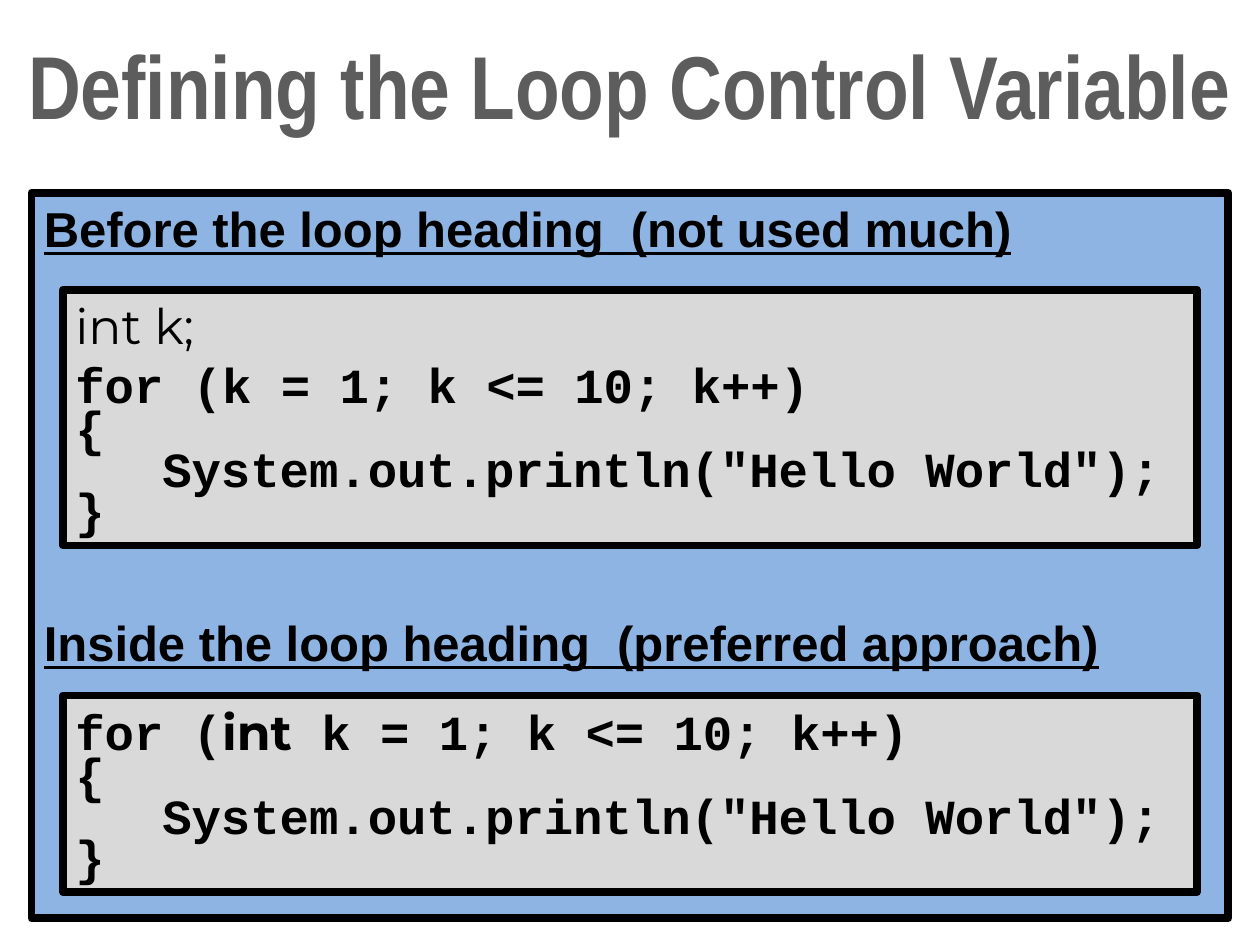
from dataclasses import dataclass

from lxml.etree import SubElement
from pptx import Presentation
from pptx.dml.color import RGBColor as RGB
from pptx.enum.shapes import MSO_SHAPE as SHAPE
from pptx.enum.text import MSO_ANCHOR as ANCHOR, PP_ALIGN as ALIGN
from pptx.oxml.ns import qn
from pptx.util import Inches, Pt

COLORS = {"title": "5D5D5D", "panel": "8EB4E3", "code": "D9D9D9", "ink": "000000"}
HEADING = {"name": "Arial", "size": Pt(28), "bold": True, "underline": True}
CODE = {"name": "Courier New", "size": Pt(28), "bold": True}
KEYWORD = {"name": "Montserrat", "size": Pt(28), "bold": True}
DECLARATION = KEYWORD | {"bold": False}
TITLE = {"name": "Arial Narrow", "size": Pt(51), "bold": True}


@dataclass
class Line:
    runs: list[tuple[str, dict]]
    spacing: float = 1.0
    before: float = 0


@dataclass
class Box:
    left: float
    top: float
    width: float
    height: float
    fill: str
    lines: list[Line]


def add_run(p, text: str, fmt: dict, color: str = "ink") -> None:
    r = p.add_run()
    r.text = text
    for key, value in fmt.items():
        setattr(r.font, key, value)
    r.font.color.rgb = RGB.from_string(COLORS[color])


def add_indent_stop(p, inches: float) -> None:
    tabs = SubElement(p._p.get_or_add_pPr(), qn("a:tabLst"))
    SubElement(tabs, qn("a:tab"), pos=str(Inches(inches)), algn="l")


def add_box(s, box: Box) -> None:
    sp = s.shapes.add_shape(SHAPE.RECTANGLE, Inches(box.left), Inches(box.top),
                            Inches(box.width), Inches(box.height))
    sp.shadow.inherit = False
    sp.fill.solid()
    sp.fill.fore_color.rgb = RGB.from_string(COLORS[box.fill])
    sp.line.color.rgb = RGB.from_string(COLORS["ink"])
    sp.line.width = Pt(4.5)
    tf = sp.text_frame
    tf.word_wrap = True
    tf.vertical_anchor = ANCHOR.TOP
    for i, line in enumerate(box.lines):
        p = tf.paragraphs[0] if i == 0 else tf.add_paragraph()
        p.alignment = ALIGN.LEFT
        p.line_spacing = line.spacing
        if line.before:
            p.space_before = Pt(line.before)
        if line.runs[0][0].startswith("\t"):
            add_indent_stop(p, 0.69)
        for text, fmt in line.runs:
            add_run(p, text, fmt)


def add_title(s, text: str) -> None:
    sp = s.shapes.add_textbox(0, 0, Inches(10), Inches(1.33))
    tf = sp.text_frame
    tf.word_wrap = True
    tf.vertical_anchor = ANCHOR.MIDDLE
    p = tf.paragraphs[0]
    p.alignment = ALIGN.CENTER
    add_run(p, text, TITLE, "title")


# Loop body shared by both examples
BODY = [Line([(text, CODE)], spacing=0.7)
        for text in ("{", '\tSystem.out.println("Hello World");', "}")]

BOXES = [
    # Panel with the two headings
    Box(0.25, 1.53, 9.5, 5.76, "panel", [
        Line([("Before the loop heading  (not used much)", HEADING)]),
        Line([("Inside the loop heading  (preferred approach)", HEADING)], before=203),
    ]),
    # Variable defined before the loop
    Box(0.5, 2.3, 9, 2.03, "code", [
        Line([("int k;", DECLARATION)]),
        Line([("for (k = 1; k <= 10; k++)", CODE)]),
        *BODY,
    ]),
    # Variable defined inside the heading
    Box(0.5, 5.52, 9, 1.56, "code", [
        Line([("for (", CODE), ("int", KEYWORD), (" k = 1; k <= 10; k++)", CODE)]),
        *BODY,
    ]),
]


def main() -> None:
    prs = Presentation()
    prs.slide_width, prs.slide_height = Inches(10), Inches(7.5)
    s = prs.slides.add_slide(prs.slide_layouts[6])
    add_title(s, "Defining the Loop Control Variable")
    for box in BOXES:
        add_box(s, box)
    prs.save("out.pptx")


if __name__ == "__main__":
    main()
